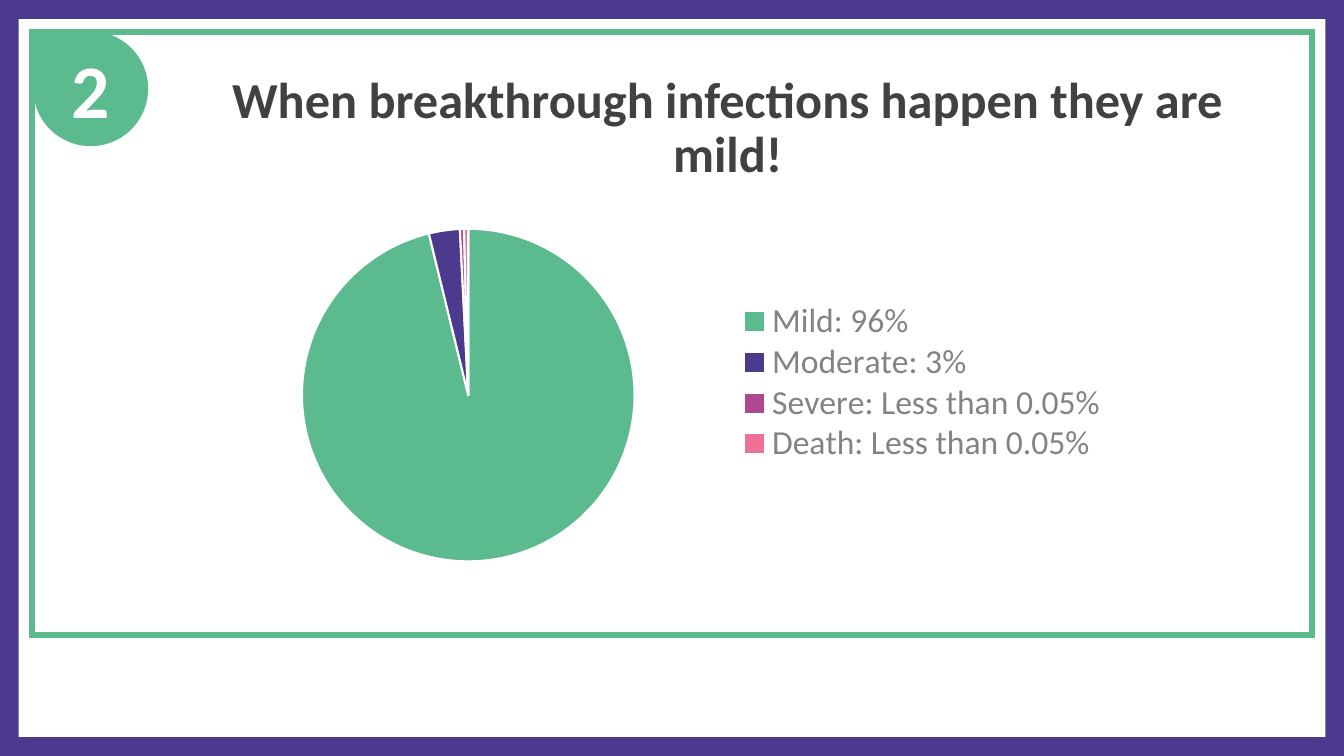
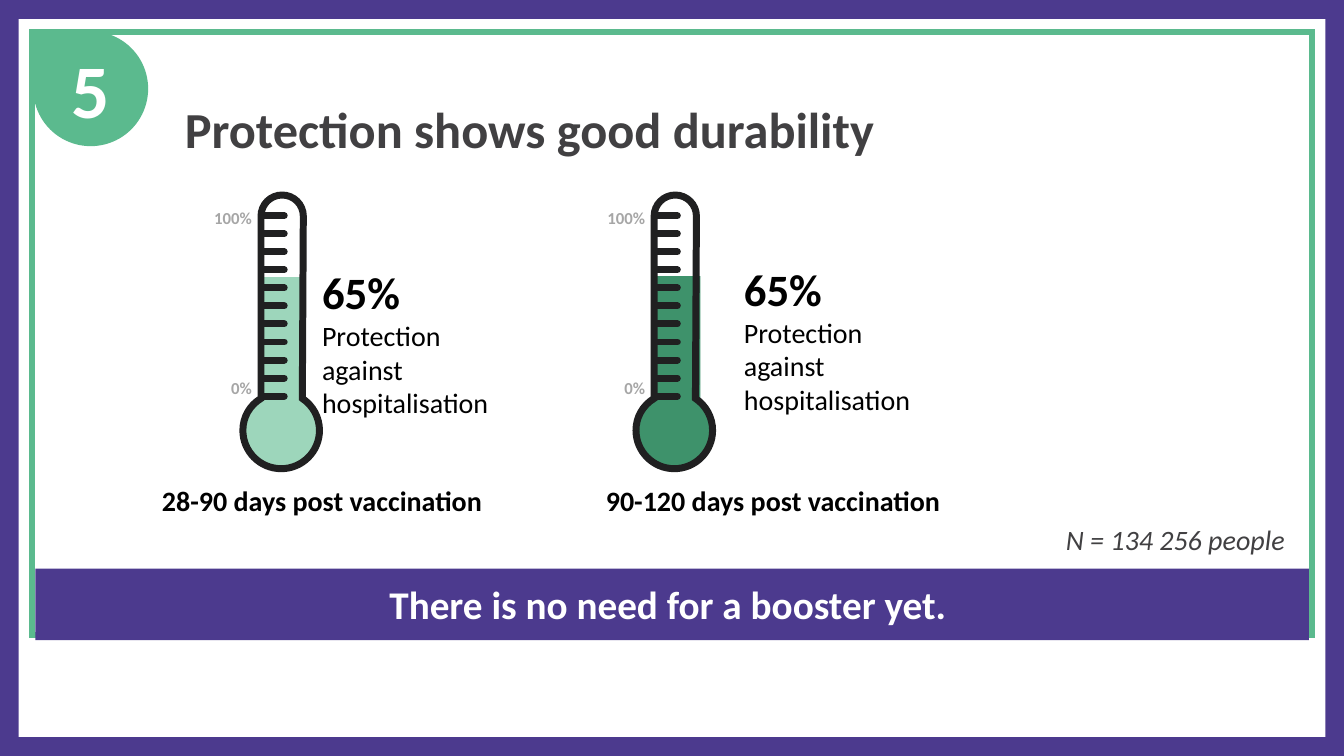
import dataclasses
import math

import pptx
import pptx.chart.data
import pptx.dml.color
import pptx.enum.chart
import pptx.enum.shapes
import pptx.enum.text
import pptx.oxml
import pptx.oxml.ns
import pptx.util

ALIGN = pptx.enum.text.PP_ALIGN
ANCHOR = pptx.enum.text.MSO_ANCHOR
SHAPE = pptx.enum.shapes.MSO_SHAPE
FONT = "Calibri"
SLIDE_H = pptx.util.Inches(7.5)
SLIDE_W = pptx.util.Emu(SLIDE_H * 16 // 9)
GRID_ROWS = 75
COLORS = {
    "purple": "4C3A8E",
    "green": "5BBA8E",
    "light_green": "9DD6BB",
    "dark_green": "3E926B",
    "magenta": "AF4793",
    "pink": "ED7296",
    "white": "FFFFFF",
    "black": "000000",
    "ink": "202021",
    "title": "414042",
    "legend": "838285",
    "scale": "A6A6A6",
}


@dataclasses.dataclass(frozen=True)
class Box:
    col: float
    row: float
    cols: float
    rows: float

    def emu(self) -> list:
        return [cells(n) for n in (self.col, self.row, self.cols, self.rows)]


@dataclasses.dataclass(frozen=True)
class Line:
    text: str
    size: int
    color: str = "black"
    bold: bool = True
    italic: bool = False


@dataclasses.dataclass(frozen=True)
class TextStyle:
    align: int = ALIGN.LEFT
    anchor: int = ANCHOR.TOP
    inset_x: float = 0
    inset_y: float = 0
    spacing: float = 1.0


@dataclasses.dataclass(frozen=True)
class Thermometer:
    axis: float
    color: str
    tube: Box
    result: Box
    period: str
    period_col: float


CENTERED = TextStyle(ALIGN.CENTER)
BADGE = TextStyle(ALIGN.CENTER, ANCHOR.MIDDLE)
BANNER = TextStyle(ALIGN.CENTER, inset_y=1.2)
NOTE = TextStyle(inset_x=1, inset_y=0.5)
SCALE = TextStyle(ALIGN.RIGHT)

THERMOMETERS = [
    Thermometer(28, "light_green", Box(26, 27.5, 4, 12.3),
                Box(31.95, 26.25, 18.7, 15.5), "28-90 days post vaccination", 15.25),
    Thermometer(67, "dark_green", Box(64.9, 27.4, 4.6, 12.9),
                Box(73.8, 25.95, 18.7, 15.5), "90-120 days post vaccination", 60),
]
STEM_HALF, STEM_TOP = 2.1, 21.45
BULB_ROW, BULB_R, BULB_FILL_R = 42.7, 3.8, 3.7
TICK_COUNT, TICK_FIRST, TICK_LAST = 11, 21.4, 39.3
QUARTER = math.pi / 2

CHART = Box(4.7, 21.3, 121.7, 35.9)
PIE = Box(29.95, 22.7, 33, 33)
LEGEND = Box(73, 29.9, 37, 16.1)
SEVERITIES = [
    ("Mild: 96%", 96, "green"),
    ("Moderate: 3%", 3, "purple"),
    ("Severe: Less than 0.05%", 0.4, "magenta"),
    ("Death: Less than 0.05%", 0.4, "pink"),
]


def cells(n: float) -> pptx.util.Emu:
    return pptx.util.Emu(round(n * SLIDE_H / GRID_ROWS))


def rgb(name: str) -> pptx.dml.color.RGBColor:
    return pptx.dml.color.RGBColor.from_string(COLORS[name])


def element(tag: str, prefix: str = "a"):
    return pptx.oxml.parse_xml(f"<{prefix}:{tag} {pptx.oxml.ns.nsdecls(prefix)}/>")


def paint(sp, fill: str = "", line: str = "", width: float = 0) -> None:
    sp.shadow.inherit = False
    if fill:
        sp.fill.solid()
        sp.fill.fore_color.rgb = rgb(fill)
    else:
        sp.fill.background()
    if line:
        sp.line.color.rgb = rgb(line)
        sp.line.width = pptx.util.Pt(width)
        join = element("miter")
        join.set("lim", "800000")
        sp.line._get_or_add_ln().append(join)
    else:
        sp.line.fill.background()


def add_block(s, kind: int, box: Box, fill: str = "", line: str = "", width: float = 0):
    sp = s.shapes.add_shape(kind, *box.emu())
    paint(sp, fill, line, width)
    return sp


def write(sp, lines: list[Line], style: TextStyle) -> None:
    tf = sp.text_frame
    tf.word_wrap = True
    tf.vertical_anchor = style.anchor
    tf.margin_left = tf.margin_right = cells(style.inset_x)
    tf.margin_top = tf.margin_bottom = cells(style.inset_y)
    tf.text = "\n".join(line.text for line in lines)
    for p, line in zip(tf.paragraphs, lines):
        p.alignment = style.align
        p.line_spacing = style.spacing
        font = p.runs[0].font
        font.name = FONT
        font.size = pptx.util.Pt(line.size)
        font.bold = line.bold
        font.italic = line.italic
        font.color.rgb = rgb(line.color)


def add_text(s, box: Box, lines: list[Line], style: TextStyle = TextStyle()) -> None:
    write(s.shapes.add_textbox(*box.emu()), lines, style)


def add_title(s, box: Box, text: str, align: int) -> None:
    style = TextStyle(align, ANCHOR.MIDDLE, 1, 0.5, 0.9)
    add_text(s, box, [Line(text, 36, "title")], style)


def add_framed_slide(prs):
    s = prs.slides.add_slide(prs.slide_layouts[6])
    s.background.fill.solid()
    s.background.fill.fore_color.rgb = rgb("purple")
    add_block(s, SHAPE.RECTANGLE, Box(1.85, 1.9, 129.65, 71.2), "white")
    add_block(s, SHAPE.RECTANGLE, Box(3.2, 3.2, 126.95, 59.8), "", "green", 4)
    return s


def add_badge(s, number: str) -> None:
    box = Box(3.3, 3.1, 11.4, 11.4)
    add_block(s, SHAPE.TEAR, box, "green").rotation = 270
    write(add_block(s, SHAPE.OVAL, box), [Line(number, 54, "white")], BADGE)


def set_layout(parent, index: int, box: Box, target: str = "") -> None:
    for old in parent.findall(pptx.oxml.ns.qn("c:layout")):
        parent.remove(old)
    shares = {
        "x": (box.col - CHART.col) / CHART.cols,
        "y": (box.row - CHART.row) / CHART.rows,
        "w": box.cols / CHART.cols,
        "h": box.rows / CHART.rows,
    }
    modes = '<c:xMode val="edge"/><c:yMode val="edge"/>'
    values = "".join(f'<c:{k} val="{v:.4f}"/>' for k, v in shares.items())
    xml = (
        f'<c:layout {pptx.oxml.ns.nsdecls("c")}><c:manualLayout>'
        f"{target}{modes}{values}</c:manualLayout></c:layout>"
    )
    parent.insert(index, pptx.oxml.parse_xml(xml))


def add_severity_pie(s) -> None:
    data = pptx.chart.data.CategoryChartData()
    data.categories = [name for name, _, _ in SEVERITIES]
    data.add_series("Series 1", [value for _, value, _ in SEVERITIES])
    kind = pptx.enum.chart.XL_CHART_TYPE.PIE
    chart = s.shapes.add_chart(kind, *CHART.emu(), data).chart
    chart.has_title = False
    chart.font.name = FONT
    chart.font.size = pptx.util.Pt(10)
    chart.font.color.rgb = rgb("title")
    plot = chart.plots[0]
    plot.vary_by_categories = True
    for i, (_, _, color) in enumerate(SEVERITIES):
        fmt = plot.series[0].points[i].format
        fmt.fill.solid()
        fmt.fill.fore_color.rgb = rgb(color)
        fmt.line.color.rgb = rgb("white")
        fmt.line.width = pptx.util.Pt(1.5)
    chart.has_legend = True
    legend = chart.legend
    legend.position = pptx.enum.chart.XL_LEGEND_POSITION.RIGHT
    legend.include_in_layout = False
    legend.font.name = FONT
    legend.font.size = pptx.util.Pt(24)
    legend.font.color.rgb = rgb("legend")
    area = chart._chartSpace.find(".//" + pptx.oxml.ns.qn("c:plotArea"))
    set_layout(area, 0, PIE, '<c:layoutTarget val="inner"/>')
    set_layout(legend._element, 1, LEGEND)


def arc(x: float, y: float, radius: float, angles: list[float]) -> list:
    curves = []
    for a, b in zip(angles, angles[1:]):
        k = 4 / 3 * math.tan((b - a) / 4)
        ca, sa, cb, sb = math.cos(a), math.sin(a), math.cos(b), math.sin(b)
        units = [(ca - k * sa, sa + k * ca), (cb + k * sb, sb - k * cb), (cb, sb)]
        curves.append([(cells(x + radius * u), cells(y + radius * v)) for u, v in units])
    return curves


def add_curved_shape(s, segments: list):
    start = segments[-1][-1]
    builder = s.shapes.build_freeform(*start, scale=1.0)
    builder.add_line_segments([seg[-1] for seg in segments], close=True)
    sp = builder.convert_to_shape()
    lines = list(sp._element.iter(pptx.oxml.ns.qn("a:lnTo")))
    for line, seg in zip(lines, segments):
        if len(seg) == 1:
            continue
        curve = element("cubicBezTo")
        for x, y in seg:
            pt = element("pt")
            pt.set("x", str(x - sp.left))
            pt.set("y", str(y - sp.top))
            curve.append(pt)
        line.getparent().replace(line, curve)
    return sp


def add_outline(s, axis: float, bulb_x: float) -> None:
    neck = math.acos(STEM_HALF / BULB_R)
    dome = arc(axis, STEM_TOP, STEM_HALF, [0, -QUARTER, -2 * QUARTER])
    around = [math.pi + neck, math.pi, QUARTER, 0, -neck]
    bulb = arc(bulb_x, BULB_ROW, BULB_R, around)
    neck_row = cells(BULB_ROW - BULB_R * math.sin(neck))
    right_side = [(cells(axis + STEM_HALF), cells(STEM_TOP))]
    left_side = [(cells(axis - STEM_HALF), neck_row)]
    outline = add_curved_shape(s, [right_side, *dome, left_side, *bulb])
    paint(outline, "", "ink", 5)


def add_ticks(s, left: float) -> None:
    group = s.shapes.add_group_shape()
    pitch = (TICK_LAST - TICK_FIRST) / (TICK_COUNT - 1)
    straight = pptx.enum.shapes.MSO_CONNECTOR.STRAIGHT
    for i in range(TICK_COUNT):
        y = cells(TICK_FIRST + i * pitch)
        tick = group.shapes.add_connector(straight, cells(left), y, cells(left + 2), y)
        tick.line.color.rgb = rgb("ink")
        tick.line.width = pptx.util.Pt(5)
        tick.line._get_or_add_ln().set("cap", "rnd")
        tick._element.spPr.append(element("effectLst"))


def add_thermometer(s, t: Thermometer) -> None:
    bulb_x = t.axis - 0.1
    quarters = [i * QUARTER for i in range(5)]
    bulb = add_curved_shape(s, arc(bulb_x, BULB_ROW, BULB_FILL_R, quarters))
    paint(bulb, t.color)
    add_block(s, SHAPE.RECTANGLE, t.tube, t.color)
    for text, row in (("100%", 20.65), ("0%", 37.5)):
        box = Box(t.axis - 7.6, row, 4.6, 2)
        add_text(s, box, [Line(text, 12, "scale")], SCALE)
    add_outline(s, t.axis, bulb_x)
    add_ticks(s, t.axis - 1.8)
    result = [
        Line("65%", 32),
        Line("Protection against hospitalisation", 20, bold=False),
    ]
    add_text(s, t.result, result)
    add_text(s, Box(t.period_col, 48, 33.4, 3.4), [Line(t.period, 20)], CENTERED)


def add_mild_slide(prs) -> None:
    s = add_framed_slide(prs)
    title = "When breakthrough infections happen they are mild!"
    add_title(s, Box(16.9, 5.5, 110.6, 14.6), title, ALIGN.CENTER)
    add_severity_pie(s)
    add_badge(s, "2")


def add_durability_slide(prs) -> None:
    s = add_framed_slide(prs)
    banner = add_block(s, SHAPE.RECTANGLE, Box(3.5, 56.4, 126.35, 7.1), "purple")
    write(banner, [Line("There is no need for a booster yet. ", 28, "white")], BANNER)
    title = "Protection shows good durability"
    add_title(s, Box(17.35, 5.5, 110.2, 15.3), title, ALIGN.LEFT)
    people = Line("N = 134 256 people", 20, "title", bold=False, italic=True)
    add_text(s, Box(104.75, 51.35, 25.3, 4.4), [people], NOTE)
    add_badge(s, "5")
    for t in THERMOMETERS:
        add_thermometer(s, t)


def main() -> None:
    prs = pptx.Presentation()
    prs.slide_width = SLIDE_W
    prs.slide_height = SLIDE_H
    add_mild_slide(prs)
    add_durability_slide(prs)
    prs.save("out.pptx")


if __name__ == "__main__":
    main()
